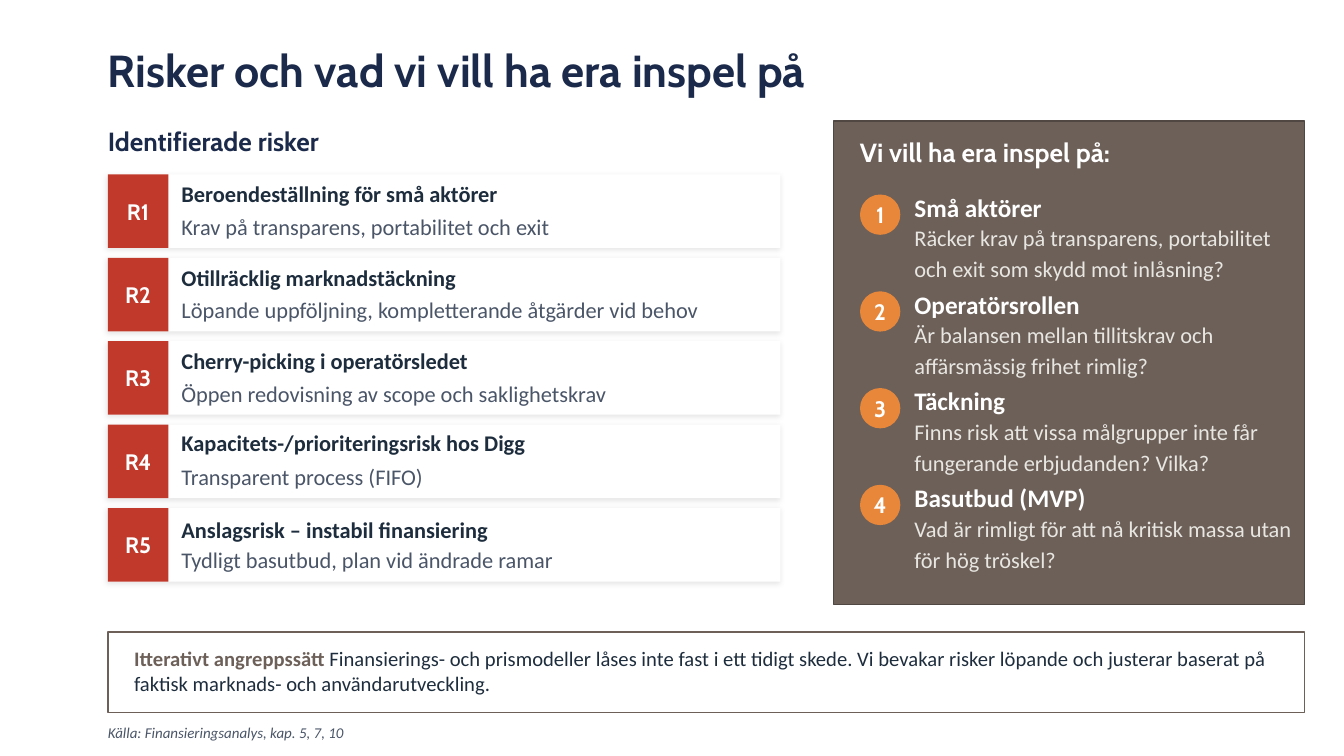
"""Build the slide on risks and the input we ask for."""
from dataclasses import dataclass
from typing import Optional

import lxml.etree
import pptx
import pptx.dml.color
import pptx.enum.shapes
import pptx.enum.text
import pptx.oxml.ns
import pptx.util

Inches = pptx.util.Inches
Kind = pptx.enum.shapes.MSO_SHAPE
Align = pptx.enum.text.PP_ALIGN
qn = pptx.oxml.ns.qn

HUES = {
    "navy": "1B2A4A", "ink": "1E2D3D", "slate": "4A5568", "white": "FFFFFF",
    "red": "C0392B", "orange": "E8873A", "brown": "6D6059", "edge": "514742",
    "cream": "E8E6E1", "black": "000000",
}
LEFT = 1.07


@dataclass(frozen=True)
class Box:
    """Place and size in inches."""
    x: float
    y: float
    w: float
    h: float


@dataclass(frozen=True)
class Style:
    """Look of a text."""
    size: float
    hue: str
    face: str = "Calibri"
    bold: bool = False
    slant: bool = False
    align: Align = Align.LEFT
    space: Optional[float] = None


@dataclass(frozen=True)
class Risk:
    """One risk card."""
    head: str
    note: str
    high: float = 0.33


@dataclass(frozen=True)
class Topic:
    """One topic we want input on."""
    head: str
    ask: str


TITLE = Style(32, "navy", "Cabin", True)
LABEL = Style(18.7, "navy", "Cabin", True)
PANEL = Style(18.7, "white", "Cabin", True)
BADGE = Style(16, "white", "Cabin", True, align=Align.CENTER)
RISK = Style(16, "ink", bold=True)
NOTE = Style(16, "slate")
TOPIC = Style(18, "white", bold=True)
ASK = Style(16, "cream", space=1.15)
SOURCE = Style(10.7, "slate", slant=True)
LEAD = Style(14.7, "brown", bold=True)
BODY = Style(14.7, "ink")

RISKS = [
    Risk("Beroendeställning för små aktörer", "Krav på transparens, portabilitet och exit"),
    Risk("Otillräcklig marknadstäckning", "Löpande uppföljning, kompletterande åtgärder vid behov"),
    Risk("Cherry-picking i operatörsledet", "Öppen redovisning av scope och saklighetskrav"),
    Risk("Kapacitets-/prioriteringsrisk hos Digg", "Transparent process (FIFO)", 0.29),
    Risk("Anslagsrisk – instabil finansiering", "Tydligt basutbud, plan vid ändrade ramar", 0.37),
]
TOPICS = [
    Topic("Små aktörer", "Räcker krav på transparens, portabilitet och exit som skydd mot inlåsning?"),
    Topic("Operatörsrollen", "Är balansen mellan tillitskrav och affärsmässig frihet rimlig?"),
    Topic("Täckning", "Finns risk att vissa målgrupper inte får fungerande erbjudanden? Vilka?"),
    Topic("Basutbud (MVP)", "Vad är rimligt för att nå kritisk massa utan för hög tröskel?"),
]


def tint(hue: str) -> pptx.dml.color.RGBColor:
    """Look up a colour."""
    return pptx.dml.color.RGBColor.from_string(HUES[hue])


def dress(font, style: Style) -> None:
    """Apply a style to a font."""
    font.size = pptx.util.Pt(style.size)
    font.name = style.face
    font.bold = style.bold
    font.italic = style.slant
    font.color.rgb = tint(style.hue)


def frame(shape):
    """Give a shape a plain, centred text frame."""
    body = shape.text_frame
    body.word_wrap = True
    body.auto_size = pptx.enum.text.MSO_AUTO_SIZE.NONE
    body.vertical_anchor = pptx.enum.text.MSO_ANCHOR.MIDDLE
    body.margin_left = body.margin_right = body.margin_top = body.margin_bottom = 0
    return body


def write(shape, text: str, style: Style) -> None:
    """Write one paragraph into a shape."""
    para = frame(shape).paragraphs[0]
    para.text = text
    para.alignment = style.align
    if style.space:
        para.line_spacing = style.space
    dress(para.font, style)


def span(box: Box) -> tuple:
    """Turn a box into lengths."""
    return Inches(box.x), Inches(box.y), Inches(box.w), Inches(box.h)


def label(slide, box: Box, text: str, style: Style) -> None:
    """Add a text box."""
    write(slide.shapes.add_textbox(*span(box)), text, style)


def block(slide, box: Box, fill: str, line: Optional[str] = None, kind: Kind = Kind.RECTANGLE):
    """Add a filled shape."""
    shape = slide.shapes.add_shape(kind, *span(box))
    shape.shadow.inherit = False
    shape.fill.solid()
    shape.fill.fore_color.rgb = tint(fill)
    if line:
        shape.line.color.rgb = tint(line)
        shape.line.width = pptx.util.Pt(1)
    else:
        shape.line.fill.background()
    return shape


def shade(shape) -> None:
    """Cast a soft shadow."""
    made = lxml.etree.SubElement
    list_ = shape._element.spPr.find(qn("a:effectLst"))
    cast = made(list_, qn("a:outerShdw"), blurRad=str(pptx.util.Pt(4)),
                dist=str(pptx.util.Pt(1.5)), dir=str(135 * 60000),
                algn="bl", rotWithShape="0")
    tone = made(cast, qn("a:srgbClr"), val=HUES["black"])
    made(tone, qn("a:alpha"), val="10000")


def card(slide, rank: int, risk: Risk) -> None:
    """Draw a risk card."""
    top = 1.73 + 0.8275 * (rank - 1)
    shade(block(slide, Box(LEFT, top, 6.67, 0.73), "white"))
    write(block(slide, Box(LEFT, top, 0.6, 0.73), "red"), f"R{rank}", BADGE)
    label(slide, Box(1.8, top + 0.03, 5.73, risk.high), risk.head, RISK)
    label(slide, Box(1.8, top + 0.36, 5.73, 0.31), risk.note, NOTE)


def point(slide, rank: int, topic: Topic) -> None:
    """Draw a numbered topic."""
    top = 1.93 + 0.96 * (rank - 1)
    disc = block(slide, Box(8.53, top, 0.4, 0.4), "orange", kind=Kind.OVAL)
    write(disc, str(rank), BADGE)
    label(slide, Box(9.07, top - 0.02, 3.47, 0.29), topic.head, TOPIC)
    label(slide, Box(9.07, top + 0.3, 3.76, 0.53), topic.ask, ASK)


def banner(slide) -> None:
    """Draw the framed remark."""
    body = frame(block(slide, Box(LEFT, 6.27, 11.87, 0.8), "white", "brown"))
    body.margin_left, body.margin_right = Inches(0.26), Inches(0.28)
    body.margin_bottom = Inches(0.03)
    para = body.paragraphs[0]
    para.alignment = Align.LEFT
    for text, style in (
        ("Itterativt angreppssätt ", LEAD),
        ("Finansierings- och prismodeller låses inte fast i ett tidigt skede. "
         "Vi bevakar risker löpande och justerar baserat på "
         "faktisk marknads- och användarutveckling.", BODY),
    ):
        run = para.add_run()
        run.text = text
        dress(run.font, style)


def main() -> None:
    """Build and save the deck."""
    deck = pptx.Presentation()
    deck.slide_width, deck.slide_height = Inches(13.33), Inches(7.5)
    slide = deck.slides.add_slide(deck.slide_layouts[5])
    title = slide.shapes.title
    title.left, title.top, title.width, title.height = span(Box(LEFT, 0.33, 12, 0.73))
    write(title, "Risker och vad vi vill ha era inspel på", TITLE)
    label(slide, Box(LEFT, 1.2, 6.67, 0.4), "Identifierade risker", LABEL)
    for rank, risk in enumerate(RISKS, 1):
        card(slide, rank, risk)
    block(slide, Box(8.27, 1.2, 4.67, 4.8), "brown", "edge")
    label(slide, Box(8.53, 1.27, 4.13, 0.47), "Vi vill ha era inspel på:", PANEL)
    for rank, topic in enumerate(TOPICS, 1):
        point(slide, rank, topic)
    banner(slide)
    label(slide, Box(LEFT, 7.13, 6.67, 0.27), "Källa: Finansieringsanalys, kap. 5, 7, 10", SOURCE)
    deck.save("out.pptx")


if __name__ == "__main__":
    main()
